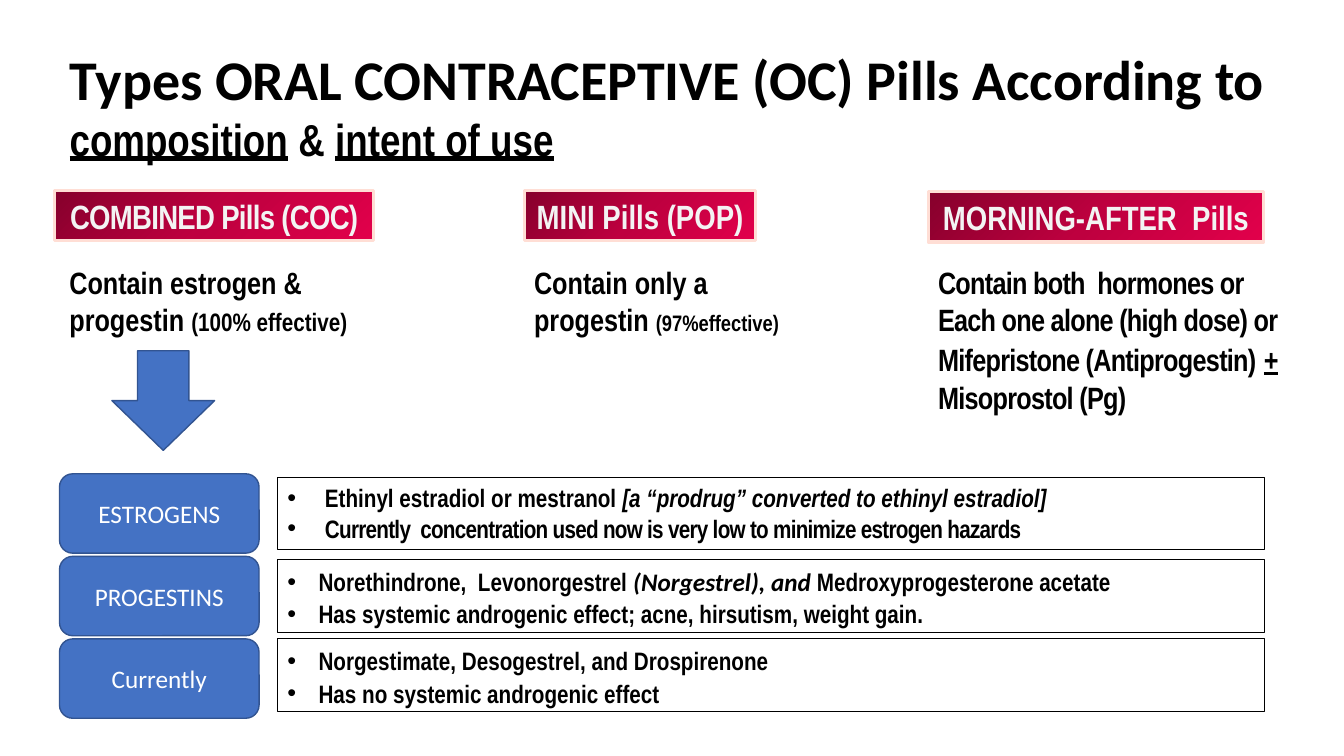
from copy import deepcopy

from lxml import etree
from pptx import Presentation
from pptx.dml.color import RGBColor
from pptx.enum.shapes import MSO_SHAPE
from pptx.enum.text import MSO_ANCHOR, MSO_AUTO_SIZE, PP_ALIGN
from pptx.oxml.ns import qn
from pptx.util import Cm, Pt

RECTANGLE = MSO_SHAPE.RECTANGLE
ROUNDED = MSO_SHAPE.ROUNDED_RECTANGLE
DOWN_ARROW = MSO_SHAPE.DOWN_ARROW
TOP, MIDDLE = MSO_ANCHOR.TOP, MSO_ANCHOR.MIDDLE
LEFT, CENTER = PP_ALIGN.LEFT, PP_ALIGN.CENTER
GROW, FIXED = MSO_AUTO_SIZE.SHAPE_TO_FIT_TEXT, MSO_AUTO_SIZE.NONE
TITLE_ONLY = 5
NARROW, ROUND = "Arial Narrow", "Calibri"
COLORS = {
    "ink": "000000",
    "white": "FFFFFF",
    "pale": "F3F3F3",
    "blue": "4472C4",
    "blue_edge": "325491",
    "wine": "86002C",
    "crimson": "BE003F",
    "red": "E2004B",
    "blush": "FFDED5",
}

TYPES = [
    {
        "banner": (1.37, 4.8, 8.05, 1.27),
        "name": "COMBINED Pills (COC)",
        "tracking": -50,
        "detail": (1.5, 6.53, 8.05, 2.13),
        "paragraphs": [["Contain estrogen &  progestin ", ("(100% effective)", {"size": 18})]],
    },
    {
        "banner": (13.21, 4.8, 5.84, 1.27),
        "name": "MINI Pills (POP)",
        "tracking": 0,
        "detail": (13.21, 6.53, 6.83, 2.13),
        "paragraphs": [["Contain only a progestin ", ("(97%effective)", {"size": 16})]],
    },
    {
        "banner": (23.39, 4.83, 8.46, 1.27),
        "name": "MORNING-AFTER  Pills",
        "tracking": 0,
        "detail": (23.39, 6.53, 9.53, 4.11),
        "paragraphs": [
            [("Contain both  hormones or", {"tracking": -50})],
            [
                ("Each one alone (high dose) or Mifepristone (Antiprogestin)", {"tracking": -50}),
                (" ", {"size": 24, "font": ROUND}),
                ("+", {"underline": True, "tracking": -50}),
                (" Misoprostol (Pg)", {"tracking": -50}),
            ],
        ],
    },
]

HORMONES = [
    {
        "label": "ESTROGENS",
        "offset": 0.1,
        "height": 1.8,
        "format": {"indent": 0.95},
        "paragraphs": [
            [
                "Ethinyl estradiol or mestranol ",
                ("[a “prodrug” converted to ethinyl estradiol]", {"italic": True}),
            ],
            [("Currently  concentration used now is very low to minimize estrogen hazards",
              {"tracking": -50})],
        ],
    },
    {
        "label": "PROGESTINS",
        "offset": 0.08,
        "height": 1.83,
        "format": {"indent": 0.79, "spacing": Pt(23)},
        "paragraphs": [
            [
                "Norethindrone,  Levonorgestrel ",
                ("(Norgestrel), and ", {"font": ROUND, "italic": True}),
                "Medroxyprogesterone acetate",
            ],
            ["Has systemic androgenic effect; acne, hirsutism, weight gain."],
        ],
    },
    {
        "label": "Currently",
        "offset": 0,
        "height": 1.83,
        "format": {"indent": 0.79, "spacing": Pt(23)},
        "paragraphs": [
            ["Norgestimate, Desogestrel, and Drospirenone"],
            ["Has no systemic androgenic effect"],
        ],
    },
]


def rgb(name):
    """Return the palette colour with the given name."""
    return RGBColor.from_string(COLORS[name])


def lengths(box):
    """Turn a box in centimetres into lengths."""
    return [Cm(value) for value in box]


def add_span(para, text, size=18, font=NARROW, color="ink", bold=True,
             italic=False, underline=False, tracking=0):
    """Add one formatted run to a paragraph."""
    span = para.add_run()
    span.text = text
    span.font.size, span.font.name = Pt(size), font
    span.font.bold, span.font.italic, span.font.underline = bold, italic, underline
    span.font.color.rgb = rgb(color)
    if tracking:
        span.font._element.set("spc", str(tracking))


def add_bullet(para, indent):
    """Give a paragraph a hanging round bullet."""
    properties = para._p.get_or_add_pPr()
    properties.set("marL", str(Cm(indent)))
    properties.set("indent", str(-Cm(indent)))
    etree.SubElement(properties, qn("a:buFont")).set("typeface", "Arial")
    etree.SubElement(properties, qn("a:buChar")).set("char", "•")


def write(shape, paragraphs, align=LEFT, anchor=TOP, fit=GROW, indent=0, spacing=1.0, **style):
    """Write paragraphs of plain or specially formatted spans into a shape."""
    frame = shape.text_frame
    frame.word_wrap, frame.auto_size, frame.vertical_anchor = True, fit, anchor
    for index, spans in enumerate(paragraphs):
        para = frame.add_paragraph() if index else frame.paragraphs[0]
        if indent:
            add_bullet(para, indent)
        para.alignment, para.line_spacing = align, spacing
        para.space_before = para.space_after = Pt(0)
        for span in spans:
            text, changes = (span, {}) if isinstance(span, str) else span
            add_span(para, text, **{**style, **changes})


def add_block(page, kind, box, line, width, fill=None):
    """Add a preset shape with an outline and an optional solid fill."""
    shape = page.shapes.add_shape(kind, *lengths(box))
    shape.shadow.inherit = False
    shape.line.color.rgb, shape.line.width = rgb(line), Pt(width)
    if fill:
        shape.fill.solid()
        shape.fill.fore_color.rgb = rgb(fill)
    else:
        shape.fill.background()
    return shape


def shade_banner(shape):
    """Fill a banner with the three-stop red gradient."""
    shape.fill.gradient()
    shape.fill.gradient_angle = 315
    stops = shape._element.spPr.find(qn("a:gradFill")).find(qn("a:gsLst"))
    stops.insert(1, deepcopy(stops[0]))
    for index, name in enumerate(["wine", "crimson", "red"]):
        stop = shape.fill.gradient_stops[index]
        stop.color.rgb, stop.position = rgb(name), index / 2


def add_title(page, box):
    """Place and write the slide title."""
    title = page.shapes.title
    title.left, title.top, title.width, title.height = lengths(box)
    write(title, [[
        ("Types ORAL CONTRACEPTIVE (OC) Pills According to ", {"size": 40, "font": ROUND}),
        ("composition", {"underline": True}),
        " & ",
        ("intent of use", {"underline": True}),
    ]], size=32)


def add_type(page, kind):
    """Add the banner and description of one type of pill."""
    banner = add_block(page, RECTANGLE, kind["banner"], "blush", 2.25)
    shade_banner(banner)
    write(banner, [[kind["name"]]], align=CENTER, size=24, color="pale", tracking=kind["tracking"])
    detail = page.shapes.add_textbox(*lengths(kind["detail"]))
    write(detail, kind["paragraphs"], size=22)


def add_hormone(page, hormone, box):
    """Add a hormone label with its bulleted facts beside it."""
    left, top, width, height = box
    label_width, facts_left = 5.03, 5.49
    label = add_block(page, ROUNDED, (left, top, label_width, height), "blue_edge", 1, "blue")
    write(label, [[hormone["label"]]], align=CENTER, anchor=MIDDLE, fit=FIXED,
          font=ROUND, color="white", bold=False)
    facts_box = (left + facts_left, top + hormone["offset"], width - facts_left, hormone["height"])
    facts = add_block(page, RECTANGLE, facts_box, "ink", 0.75)
    write(facts, hormone["paragraphs"], **hormone["format"])


def main():
    """Build and save the deck."""
    deck = Presentation()
    deck.slide_width, deck.slide_height = Cm(33.87), Cm(19.05)
    page = deck.slides.add_slide(deck.slide_layouts[TITLE_ONLY])
    add_title(page, (1.5, 0.99, 30.76, 3.33))
    for kind in TYPES:
        add_type(page, kind)
    for index, hormone in enumerate(HORMONES):
        add_hormone(page, hormone, (1.5, 11.94 + 2.08 * index, 30.36, 2))
    add_block(page, DOWN_ARROW, (2.82, 8.84, 2.59, 2.51), "blue_edge", 1, "blue")
    deck.save("out.pptx")


if __name__ == "__main__":
    main()
